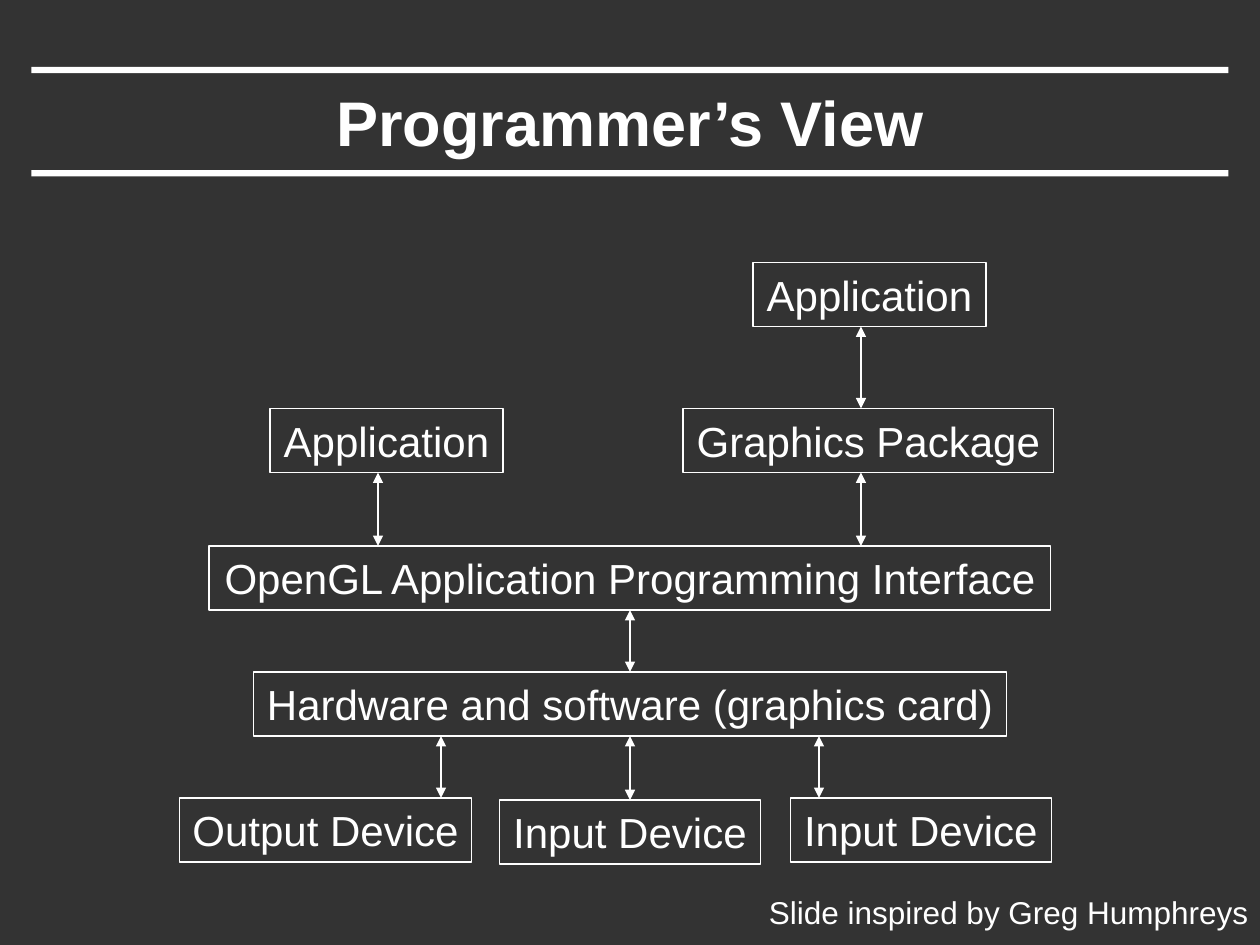
from collections import namedtuple

from lxml import etree
from pptx import Presentation
from pptx import util as u
from pptx.dml.color import RGBColor
from pptx.enum import shapes, text
from pptx.oxml import ns

CHARCOAL = RGBColor(0x33, 0x33, 0x33)
WHITE = RGBColor(0xFF, 0xFF, 0xFF)
FONT = "Arial"
CELL = u.Inches(1) / 6
COLUMNS, ROWS = 60, 45
NODE_ROWS = 3.05
BOTTOM, TOP = 2, 0

Box = namedtuple("Box", "left top width height")


def cells(*counts):
    return [u.Emu(round(count * CELL)) for count in counts]


def write(holder, wording, size, bold=False):
    frame = holder.text_frame
    frame.text = wording
    frame.vertical_anchor = text.MSO_ANCHOR.MIDDLE
    paragraph = frame.paragraphs[0]
    paragraph.alignment = text.PP_ALIGN.CENTER
    font = paragraph.runs[0].font
    font.name, font.size, font.bold = FONT, u.Pt(size), bold
    font.color.rgb = WHITE
    return frame


def fit(frame):
    frame.word_wrap = False
    frame.auto_size = text.MSO_AUTO_SIZE.SHAPE_TO_FIT_TEXT


def add_rectangle(slide, box):
    rectangle = slide.shapes.add_shape(shapes.MSO_SHAPE.RECTANGLE, *cells(*box))
    rectangle.shadow.inherit = False
    return rectangle


def add_header(slide, box):
    rule_rows = 0.3
    for top in (box.top, box.top + box.height - rule_rows):
        rule = add_rectangle(slide, Box(box.left, top, box.width, rule_rows))
        rule.fill.solid()
        rule.fill.fore_color.rgb = WHITE
        rule.line.fill.background()
    inset = 3
    title = slide.shapes.add_textbox(*cells(
        box.left + inset, box.top + rule_rows,
        box.width - 2 * inset, box.height - 2 * rule_rows))
    write(title, "Programmer’s View", 36, bold=True).word_wrap = True


def add_node(slide, box, wording):
    node = add_rectangle(slide, box)
    node.fill.background()
    node.line.color.rgb = WHITE
    node.line.width = u.Pt(0.75)
    fit(write(node, wording, 24))
    return node


def add_arrow(slide, column, upper, lower):
    x = cells(column)[0]
    arrow = slide.shapes.add_connector(
        shapes.MSO_CONNECTOR.STRAIGHT, x, upper.top + upper.height, x, lower.top)
    for node, site, join in ((upper, BOTTOM, arrow.begin_connect),
                             (lower, TOP, arrow.end_connect)):
        if abs(node.left + node.width // 2 - x) < u.Pt(0.1):
            join(node, site)
    arrow.line.color.rgb = WHITE
    arrow.line.width = u.Pt(0.75)
    outline = arrow.line._get_or_add_ln()
    for end in ("a:headEnd", "a:tailEnd"):
        etree.SubElement(outline, ns.qn(end), type="triangle")
    etree.SubElement(arrow._element.spPr, ns.qn("a:effectLst"))


def add_layers(slide, box):
    layers = {
        "package user": ("Application", 33.4, 0.5, 11.1),
        "package": ("Graphics Package", 33.35, 7.45, 17.64),
        "direct user": ("Application", 10.4, 7.45, 11.1),
        "interface": ("OpenGL Application Programming Interface", 22, 14, 40.08),
        "hardware": ("Hardware and software (graphics card)", 22, 20, 35.88),
        "output": ("Output Device", 7.5, 26, 13.92),
        "middle input": ("Input Device", 22, 26.1, 12.42),
        "right input": ("Input Device", 35.85, 26, 12.42),
    }
    nodes = {
        layer: add_node(slide, Box(box.left + center - width / 2, box.top + row,
                                   width, NODE_ROWS), wording)
        for layer, (wording, center, row, width) in layers.items()
    }
    for column, upper, lower in (
        (33, "package user", "package"),
        (10, "direct user", "interface"),
        (33, "package", "interface"),
        (22, "interface", "hardware"),
        (22, "hardware", "middle input"),
        (31, "hardware", "right input"),
        (13, "hardware", "output"),
    ):
        add_arrow(slide, box.left + column, nodes[upper], nodes[lower])


def add_credit(slide, box):
    credit = slide.shapes.add_textbox(*cells(*box))
    fit(write(credit, "Slide inspired by Greg Humphreys", 18))


def main():
    deck = Presentation()
    deck.slide_width, deck.slide_height = cells(COLUMNS, ROWS)
    slide = deck.slides.add_slide(deck.slide_layouts[6])
    slide.background.fill.solid()
    slide.background.fill.fore_color.rgb = CHARCOAL
    add_header(slide, Box(1.5, 3.18, 57, 5.22))
    add_layers(slide, Box(8, 12, 44, 30))
    add_credit(slide, Box(35.88, 42.24, 24.3, 2.4))
    deck.save("out.pptx")


if __name__ == "__main__":
    main()
